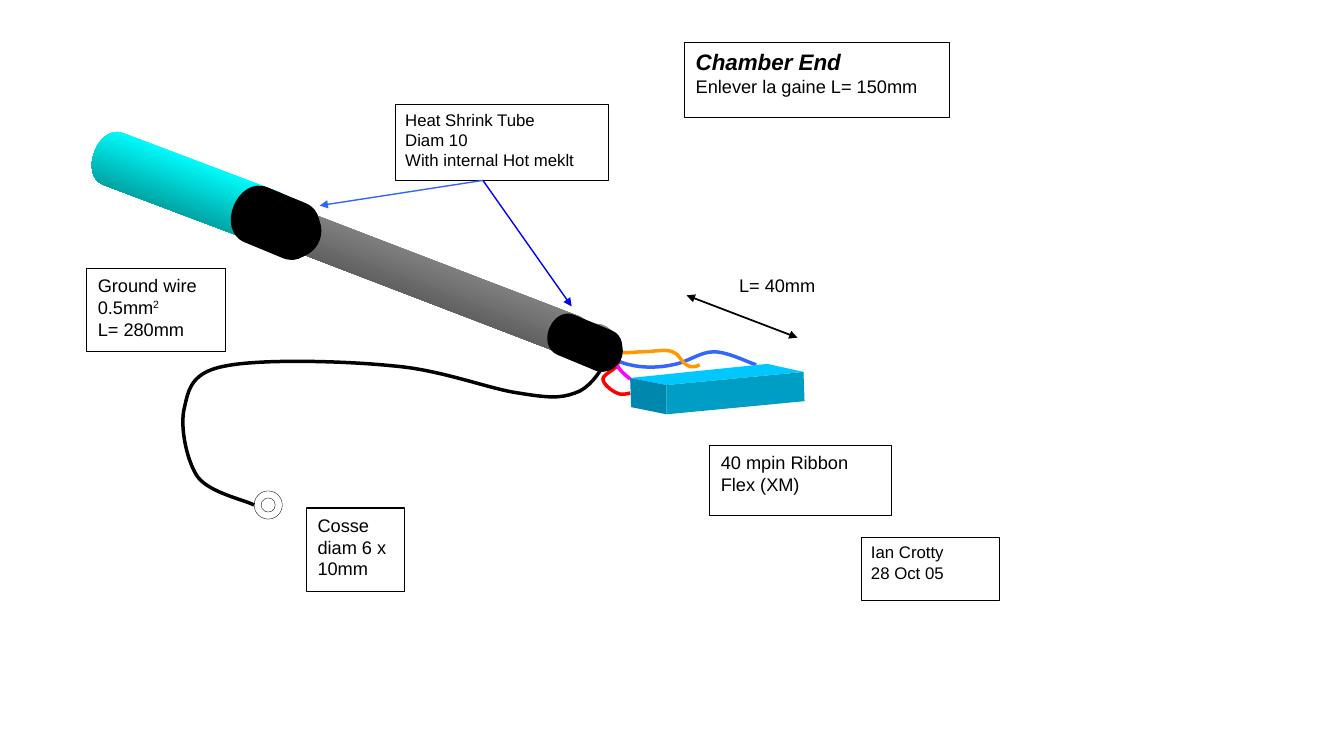
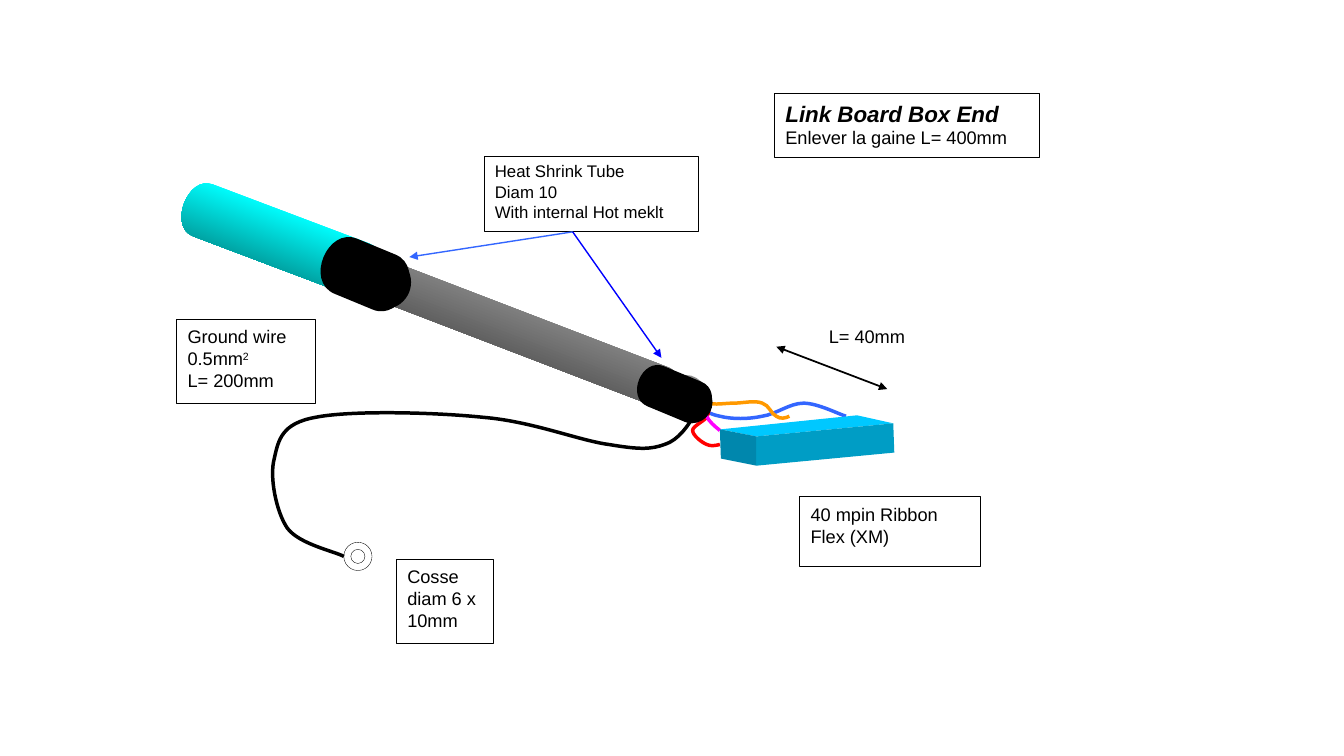
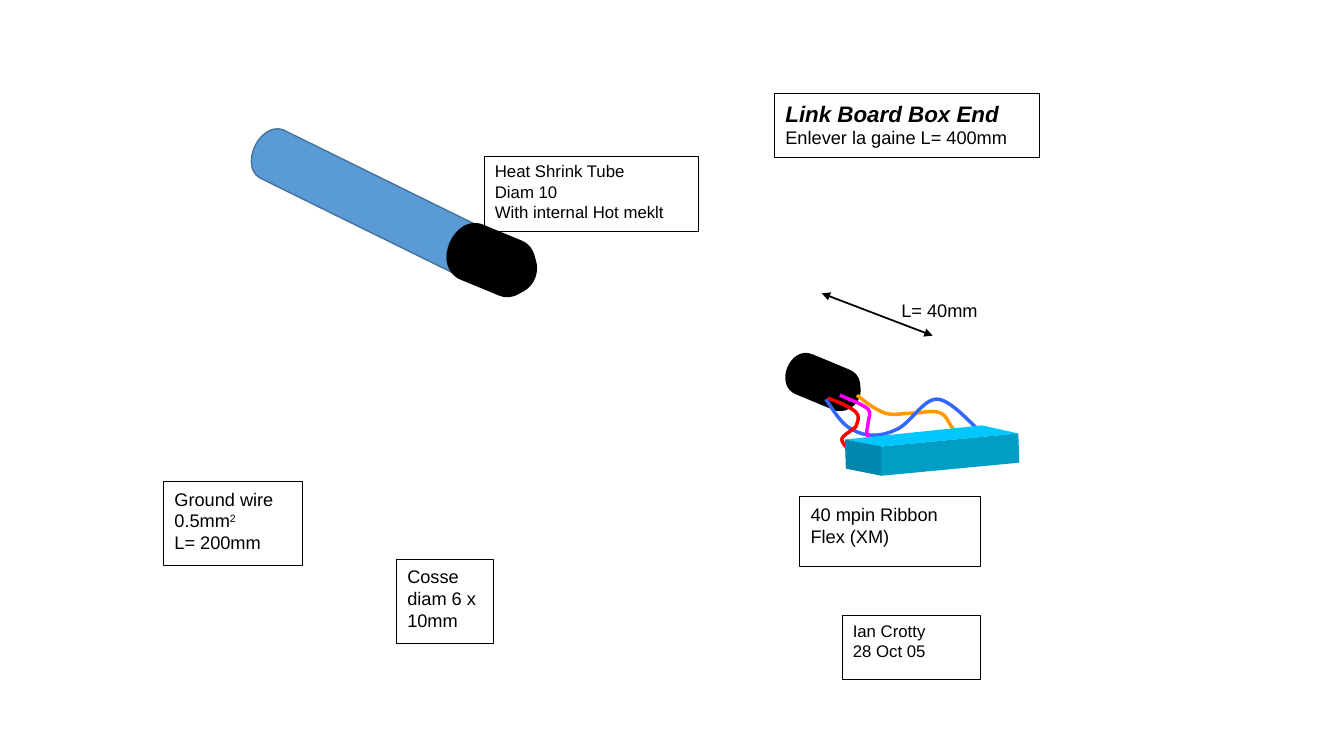
from pptx import Presentation, util as u
from pptx.dml.color import RGBColor
from pptx.enum import shapes, text
from pptx.oxml.ns import qn
from pptx.oxml.xmlchemy import OxmlElement

SIZE = (13.33, 7.5)
FONT, INK = "Arial", "000000"
WIDE, SLIM = (0.11, 0.06), (0.1, 0.05)

LABELS = {
    "flex": dict(box=(7.04, 4.42, 1.8, 0.69), lines=["40 mpin Ribbon Flex (XM)"], fill="FFFFFF"),
    "lug": dict(box=(3.04, 5.04, 0.97, 0.83), lines=["Cosse diam 6 x 10mm"]),
    "ground": dict(box=(0.86, 2.66, 1.38, 0.83), lines=["Ground wire 0.5mm^2", "L= {ground}mm"]),
    "length": dict(box=(7.22, 2.66, 1.19, 0.38), lines=["L= 40mm"], edge=None),
    "shrink": dict(box=(3.92, 1.04, 2.12, 0.75), size=12, pad=SLIM,
                   lines=["Heat Shrink Tube", "Diam 10", "With internal Hot meklt"]),
    "author": dict(box=(8.54, 5.33, 1.37, 0.63), size=12, pad=SLIM,
                   lines=["Ian Crotty", "28 Oct 05"]),
}

TUBES = {
    "sheath": dict(mid=(1.9, 1.87), size=(2.06, 0.55), bulge=0.2, turn=20.7,
                   tones=("00FFFF", "003030"), face=(2.42, 1.92, 0.55, 0.55)),
    "core": dict(mid=(4.32, 2.81), size=(3.19, 0.41), bulge=0.15, turn=21,
                 tones=("8C8C8C", "101010"), face=(5.7, 3.21, 0.42, 0.42)),
    "cap": dict(mid=(2.73, 2.21), size=(0.89, 0.59), bulge=0.24, turn=22.5,
                tones=(INK,), face=(2.67, 2.04, 0.5, 0.5), edge=INK),
    "end": dict(mid=(5.8, 3.4), size=(0.76, 0.43), bulge=0.18, turn=22.5,
                tones=(INK,), face=(5.79, 3.29, 0.37, 0.38), edge=INK),
}

WIRES = {
    "blue": ("3366FF", [(5.98, 3.49), (6.06, 3.54), (6.14, 3.6), (6.25, 3.62), (6.37, 3.65), (6.53, 3.65),
                        (6.67, 3.62), (6.81, 3.6), (6.94, 3.49), (7.08, 3.49), (7.22, 3.49), (7.43, 3.6),
                        (7.5, 3.62)]),
    "red": ("FF0000", [(5.84, 3.35), (5.95, 3.39), (6.07, 3.44), (6.12, 3.49), (6.16, 3.53), (6.14, 3.58),
                       (6.12, 3.63), (6.09, 3.67), (5.98, 3.72), (5.98, 3.76), (5.98, 3.81), (6.07, 3.88),
                       (6.12, 3.9), (6.16, 3.92), (6.21, 3.91), (6.25, 3.9)]),
    "orange": ("FF9900", [(5.84, 3.35), (5.93, 3.41), (6.02, 3.46), (6.12, 3.49), (6.21, 3.51), (6.3, 3.49),
                          (6.39, 3.49), (6.48, 3.49), (6.6, 3.46), (6.67, 3.49), (6.74, 3.51), (6.76, 3.6),
                          (6.81, 3.62), (6.85, 3.65), (6.9, 3.64), (6.94, 3.62)]),
    "pink": ("FF00FF", [(5.84, 3.21), (5.95, 3.26), (6.07, 3.3), (6.12, 3.35), (6.16, 3.39), (6.12, 3.44),
                        (6.12, 3.49), (6.12, 3.53), (6.09, 3.58), (6.12, 3.62), (6.14, 3.67), (6.2, 3.72),
                        (6.25, 3.76)]),
    "earth": (INK, [(5.84, 3.49), (5.92, 3.52), (6, 3.56), (5.98, 3.63), (5.95, 3.69), (5.84, 3.86),
                    (5.7, 3.9), (5.56, 3.95), (5.45, 3.95), (5.15, 3.9), (4.85, 3.86), (4.39, 3.67),
                    (3.9, 3.63), (3.42, 3.58), (2.59, 3.56), (2.24, 3.63), (1.9, 3.69), (1.87, 3.86),
                    (1.83, 4.04), (1.78, 4.22), (1.85, 4.57), (1.96, 4.73), (2.08, 4.89), (2.43, 4.96),
                    (2.52, 5.01)]),
}

ARROWS = {
    "span": ((6.81, 2.93), (7.91, 3.35), INK, 1.25, ("headEnd", "tailEnd")),
    "near": ((4.79, 1.79), (3.17, 2.04), "3366FF", 1, ("tailEnd",)),
    "far": ((4.79, 1.79), (5.67, 3.04), "0000FF", 1, ("tailEnd",)),
}

PLUG = [
    ("00C8FF", [(6.25, 3.75), (7.61, 3.61), (7.97, 3.69), (6.61, 3.82)]),
    ("009DC5", [(6.61, 3.82), (7.97, 3.69), (7.98, 3.98), (6.61, 4.11)]),
    ("0087AD", [(6.25, 3.75), (6.61, 3.82), (6.61, 4.11), (6.26, 4.04)]),
]

CABLE = ["flex", "blue", "red", "orange", "pink", "earth", "ring", "plug", "sheath", "core", "cap", "end",
         "lug", "ground", "span", "length", "shrink", "near", "far"]
LOOSE = ["can", "end", "cap", "shrink", "ground", "lug", "flex", "length", "span",
         "orange", "blue", "red", "pink", "plug", "author"]
SHIFT = (0.89, 0.51)
MOVES = {"can": (0, 0), "end": (2.36, 0.39), "cap": (2.14, 0.37), "ground": (0.76, 2.12),
         "length": (1.61, 0.25), "span": (1.34, -0.02), "orange": (2.66, 0.57), "blue": (2.21, 0.47),
         "red": (2.37, 0.6), "pink": (2.49, 0.71), "plug": (2.13, 0.61), "author": (-0.18, 0.78)}

SLIDES = [
    dict(head="Chamber End", strip=150, tall=0.75, ground=280, parts=CABLE + ["author"], shift=(0, 0)),
    dict(head="Link Board Box End", strip=400, tall=0.63, ground=200, parts=CABLE, shift=SHIFT),
    dict(head="Link Board Box End", strip=400, tall=0.63, ground=200, parts=LOOSE, shift=SHIFT,
         moves=MOVES, stretch={"blue": 2.35, "orange": 1.28}),
]


def tint(hue):
    return RGBColor.from_string(hue)


def style(shape, fill=None, edge=None, thick=0.75):
    shape.shadow.inherit = False
    for part, hue in ((shape.fill, fill), (shape.line.fill, edge)):
        if hue:
            part.solid()
            part.fore_color.rgb = tint(hue)
        else:
            part.background()
    if edge:
        shape.line.width = u.Pt(thick)


def place(shape, box):
    for name, val in zip(("left", "top", "width", "height"), box):
        setattr(shape, name, u.Inches(val))


def write(frame, lines, size=13, pad=WIDE, lead=None):
    form = dict(word_wrap=True, auto_size=text.MSO_AUTO_SIZE.NONE, vertical_anchor=text.MSO_ANCHOR.TOP)
    for side, val in zip(("left", "top", "right", "bottom"), pad * 2):
        form["margin_" + side] = u.Inches(val)
    for name, val in form.items():
        setattr(frame, name, val)
    for row, line in enumerate(lines):
        para = frame.add_paragraph() if row else frame.paragraphs[0]
        para.alignment = text.PP_ALIGN.LEFT
        big = bool(lead) and row == 0
        for part, words in enumerate(line.split("^")):
            run = para.add_run()
            run.text = words
            for name, val in dict(name=FONT, size=u.Pt(lead if big else size), bold=big, italic=big).items():
                setattr(run.font, name, val)
            run.font.color.rgb = tint(INK)
            if part:
                run.font._element.set("baseline", "30000")


def trace(slide, move, dots, close, bends=()):
    dots = [(u.Inches(x + move[0]), u.Inches(y + move[1])) for x, y in dots]
    pen = slide.shapes.build_freeform(*dots[0])
    pen.add_line_segments(dots[1:], close=close)
    shape = pen.convert_to_shape()
    route = next(shape._element.iter(qn("a:path")))
    legs = route.findall(qn("a:lnTo"))
    for first in bends:
        bend = OxmlElement("a:cubicBezTo")
        legs[first].addprevious(bend)
        for leg in legs[first:first + 3]:
            bend.append(leg[0])
            route.remove(leg)
    return shape


def tube(slide, move, mid, size, bulge, turn, tones, face, edge=None):
    half, rad = size[0] / 2 - bulge, size[1] / 2
    tip = half + bulge * 4 / 3
    right = [(half, -rad), (tip, -rad), (tip, rad), (half, rad)]
    dots = right + [(-x, -y) for x, y in right]
    body = trace(slide, move, [(x + mid[0], y + mid[1]) for x, y in dots], True, (0, 4))
    style(body, tones[0])
    body.rotation = turn
    if len(tones) > 1:
        body.fill.gradient()
        body.fill.gradient_angle = 270
        for stop, hue, pos in zip(body.fill.gradient_stops, tones, (0.35, 1)):
            stop.color.rgb = tint(hue)
            stop.position = pos
    style(preset(slide, move, shapes.MSO_SHAPE.OVAL, face), tones[0], edge, 2.5)


def wire(slide, move, hue, dots, grow):
    top = dots[0][1]
    dots = [(x, top + (y - top) * grow) for x, y in dots]
    style(trace(slide, move, dots, False, range(0, len(dots) - 1, 3)), None, hue, 2.5)


def arrow(slide, move, start, stop, hue, thick, tips):
    ends = [u.Inches(p + m) for dot in (start, stop) for p, m in zip(dot, move)]
    line = slide.shapes.add_connector(shapes.MSO_CONNECTOR.STRAIGHT, *ends)
    line.line.color.rgb = tint(hue)
    line.line.width = u.Pt(thick)
    props = line._element.spPr
    for tip in tips:
        node = OxmlElement("a:" + tip)
        node.set("type", "triangle")
        props.find(qn("a:ln")).append(node)
    props.append(OxmlElement("a:effectLst"))


def preset(slide, move, kind, box):
    shape = slide.shapes.add_shape(kind, 0, 0, 0, 0)
    place(shape, (box[0] + move[0], box[1] + move[1], *box[2:]))
    return shape


def label(slide, move, ground, box, lines, edge=INK, fill=None, **form):
    shape = preset(slide, move, shapes.MSO_SHAPE.RECTANGLE, box)
    style(shape, fill, edge)
    write(shape.text_frame, [line.format(ground=ground) for line in lines], **form)


def draw(slide, part, move, page):
    if part in LABELS:
        label(slide, move, page["ground"], **LABELS[part])
    elif part in TUBES:
        tube(slide, move, **TUBES[part])
    elif part in WIRES:
        wire(slide, move, *WIRES[part], page.get("stretch", {}).get(part, 1))
    elif part in ARROWS:
        arrow(slide, move, *ARROWS[part])
    elif part == "plug":
        for hue, dots in PLUG:
            style(trace(slide, move, dots, True), hue)
    elif part == "ring":
        style(preset(slide, move, shapes.MSO_SHAPE.DONUT, (2.52, 4.87, 0.28, 0.28)), None, INK, 0.25)
    elif part == "can":
        can = preset(slide, move, shapes.MSO_SHAPE.CAN, (3.4, 0.74, 0.53, 2.53))
        can.adjustments[0] = 0.7
        can.rotation = 116.2
        style(can, "5B9BD5", "43739E", 1)


def main():
    deck = Presentation()
    deck.slide_width, deck.slide_height = map(u.Inches, SIZE)
    for page in SLIDES:
        slide = deck.slides.add_slide(deck.slide_layouts[5])
        dx, dy = page["shift"]
        title = slide.shapes.title
        place(title, (6.79 + dx, 0.42 + dy, 2.63, page["tall"]))
        title.fill.solid()
        title.fill.fore_color.rgb = tint("FFFFFF")
        title.line.color.rgb = tint(INK)
        title.line.width = u.Pt(0.75)
        write(title.text_frame, [page["head"], f"Enlever la gaine L= {page['strip']}mm"], lead=16)
        for part in page["parts"]:
            draw(slide, part, page.get("moves", {}).get(part, page["shift"]), page)
    deck.save("out.pptx")


if __name__ == "__main__":
    main()
